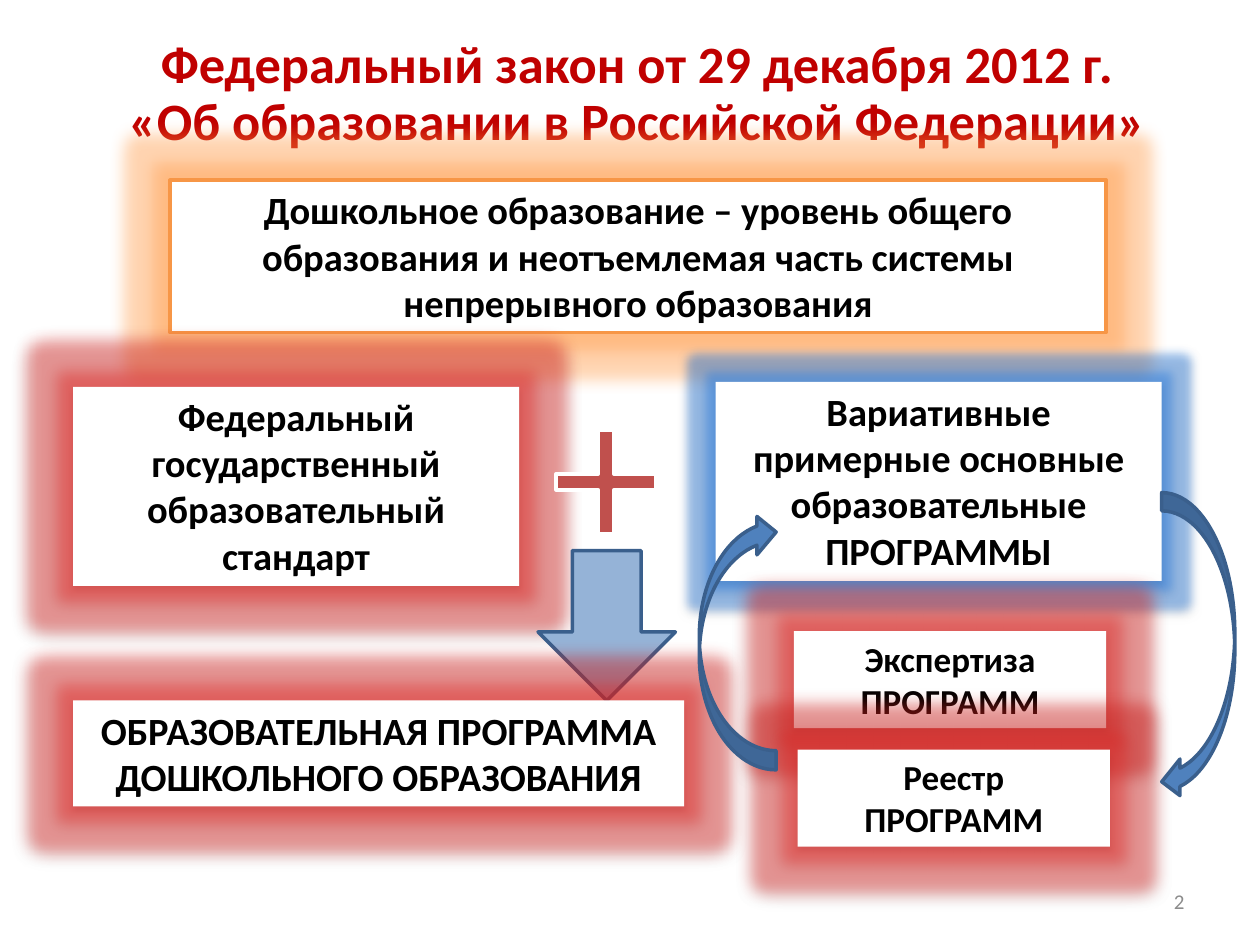
"""Build the slide on preschool education in the federal education law."""
from lxml.etree import SubElement
from pptx import Presentation
from pptx.dml.color import RGBColor
from pptx.enum.shapes import MSO_SHAPE
from pptx.enum.text import MSO_ANCHOR, MSO_AUTO_SIZE, PP_ALIGN
from pptx.oxml.ns import qn
from pptx.util import Inches, Pt

WHITE = RGBColor(0xFF, 0xFF, 0xFF)
BLACK = RGBColor(0x00, 0x00, 0x00)
DARK_RED = RGBColor(0xC0, 0x00, 0x00)
GREY = RGBColor(0x8C, 0x8C, 0x8C)
ORANGE = RGBColor(0xF7, 0x96, 0x46)
RED = RGBColor(0xC0, 0x50, 0x4D)
BLUE = RGBColor(0x4F, 0x81, 0xBD)
LIGHT_BLUE = RGBColor(0x95, 0xB3, 0xD7)
NAVY = RGBColor(0x3A, 0x5F, 0x8C)
ORANGE_GLOW = RGBColor(0xFF, 0x95, 0x3D)
RED_GLOW = RGBColor(0xEB, 0x25, 0x22)
BLUE_GLOW = RGBColor(0x26, 0x7D, 0xE6)

TITLE = "Федеральный закон от 29 декабря 2012 г.\v«Об образовании в Российской Федерации»"
LEVEL = ("Дошкольное образование – уровень общего образования и неотъемлемая "
         "часть системы непрерывного образования")
STANDARD = "Федеральный государственный образовательный стандарт"
VARIANTS = "Вариативные примерные основные образовательные ПРОГРАММЫ"
EXPERTISE = "Экспертиза ПРОГРАММ"
REGISTRY = "Реестр\nПРОГРАММ"
PROGRAM = "ОБРАЗОВАТЕЛЬНАЯ ПРОГРАММА ДОШКОЛЬНОГО ОБРАЗОВАНИЯ"

UPPER_CARDS = [
    (LEVEL, (1.35, 1.43, 7.43, 1.21), 22, ORANGE_GLOW, 18, ORANGE),
    (STANDARD, (0.58, 3.07, 3.54, 1.58), 22, RED_GLOW, 18, None),
    (VARIANTS, (5.68, 3.03, 3.54, 1.58), 22, BLUE_GLOW, 11, None),
    (EXPERTISE, (6.3, 5.01, 2.48, 0.77), 20, RED_GLOW, 18, None),
    (REGISTRY, (6.33, 5.95, 2.48, 0.77), 20, RED_GLOW, 18, None),
]
PROGRAM_CARD = (PROGRAM, (0.58, 5.56, 4.85, 0.84), 22, RED_GLOW, 18, None)


def write(frame, text, size, color, bold, align, anchor):
    frame.text = text
    frame.word_wrap = True
    frame.vertical_anchor = anchor
    for paragraph in frame.paragraphs:
        paragraph.alignment = align
        for run in paragraph.runs:
            run.font.name = "Calibri"
            run.font.size = Pt(size)
            run.font.bold = bold
            run.font.color.rgb = color


def add_label(slide, box, *style):
    label = slide.shapes.add_textbox(*map(Inches, box))
    write(label.text_frame, *style)
    return label


def add_figure(slide, preset, box, fill, outline):
    figure = slide.shapes.add_shape(preset, *map(Inches, box))
    figure.shadow.inherit = False
    figure.fill.solid()
    figure.fill.fore_color.rgb = fill
    if outline is None:
        figure.line.fill.background()
    else:
        figure.line.color.rgb = outline
        figure.line.width = Pt(2)
    return figure


def add_effect(figure, kind, color, opacity, **settings):
    effects = figure._element.spPr.find(qn("a:effectLst"))
    effect = SubElement(effects, qn(f"a:{kind}"),
                        {name: str(value) for name, value in settings.items()})
    tint = SubElement(effect, qn("a:srgbClr"), val=str(color))
    SubElement(tint, qn("a:alpha"), val=str(opacity * 1000))


def add_card(slide, text, box, size, glow, radius, outline):
    card = add_figure(slide, MSO_SHAPE.RECTANGLE, box, WHITE, outline)
    write(card.text_frame, text, size, BLACK, True, PP_ALIGN.CENTER, MSO_ANCHOR.TOP)
    card.text_frame.auto_size = MSO_AUTO_SIZE.SHAPE_TO_FIT_TEXT
    add_effect(card, "glow", glow, 40, rad=int(Pt(radius)))
    if outline is None:
        add_effect(card, "outerShdw", BLACK, 32, blurRad=int(Pt(3.5)),
                   dist=int(Pt(2.2)), dir=90 * 60000, rotWithShape=0)


def main():
    deck = Presentation()
    deck.slide_width, deck.slide_height = Inches(10), Inches(7.5)
    slide = deck.slides.add_slide(deck.slide_layouts[6])

    title = add_label(slide, (0.81, 0.13, 8.5, 1.25), TITLE, 30, DARK_RED, True,
                      PP_ALIGN.CENTER, MSO_ANCHOR.MIDDLE)
    title.text_frame.paragraphs[0].line_spacing = 0.9
    add_label(slide, (7.17, 6.95, 2.33, 0.4), "2", 12, GREY, False,
              PP_ALIGN.RIGHT, MSO_ANCHOR.MIDDLE)

    for card in UPPER_CARDS:
        add_card(slide, *card)
    plus = add_figure(slide, MSO_SHAPE.MATH_PLUS, (4.27, 3.27, 1.08, 1.11), RED, WHITE)
    plus.adjustments[0] = 0.115
    add_figure(slide, MSO_SHAPE.DOWN_ARROW, (4.27, 4.37, 1.09, 1.19), LIGHT_BLUE, NAVY)
    add_card(slide, *PROGRAM_CARD)

    for box, turn in [((9.22, 3.91, 0.58, 2.44), 0), ((5.55, 4.07, 0.61, 2.04), 180)]:
        cycle = add_figure(slide, MSO_SHAPE.CURVED_LEFT_ARROW, box, BLUE, NAVY)
        cycle.rotation = turn

    deck.save("out.pptx")


if __name__ == "__main__":
    main()
